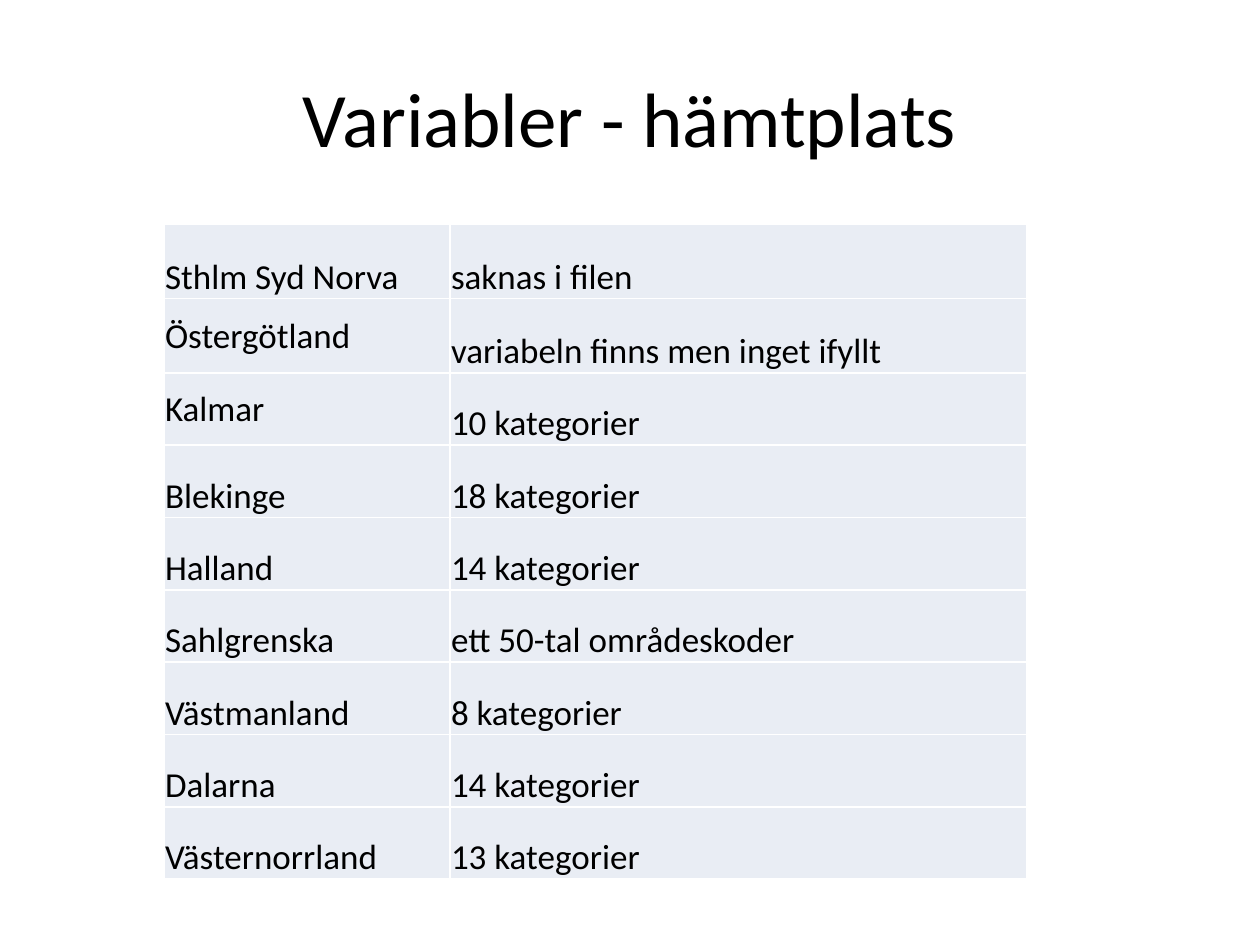
from dataclasses import dataclass

from lxml.etree import SubElement
from pptx import Presentation
from pptx.dml.color import RGBColor
from pptx.enum.text import MSO_ANCHOR, PP_ALIGN
from pptx.oxml.ns import qn
from pptx.shapes.autoshape import Shape
from pptx.slide import Slide
from pptx.table import _Cell
from pptx.text.text import _Paragraph
from pptx.util import Inches, Pt

BLACK = RGBColor(0x00, 0x00, 0x00)
WHITE = RGBColor(0xFF, 0xFF, 0xFF)
PALE_BLUE = RGBColor(0xE9, 0xED, 0xF4)
FONT = "Calibri"

TABLE_LEFT, TABLE_TOP, TABLE_HEIGHT = 1.3, 1.78, 5.2
COLUMN_WIDTHS = (2.27, 4.58)
TALL_ROWS, TALL_HEIGHT = 2, 0.59

TITLE_FORMAT = {
    "left": Inches(0.5),
    "top": Inches(0.3),
    "width": Inches(9),
    "height": Inches(1.25),
}
CELL_FORMAT = {
    "margin_left": Inches(0.01),
    "margin_right": Inches(0.01),
    "margin_top": Inches(0.01),
    "margin_bottom": 0,
}


@dataclass(frozen=True)
class Region:
    name: str
    pickup_place: str
    name_anchor: MSO_ANCHOR = MSO_ANCHOR.BOTTOM


REGIONS = (
    Region("Sthlm Syd Norva", "saknas i filen"),
    Region("Östergötland", "variabeln finns men inget ifyllt", MSO_ANCHOR.MIDDLE),
    Region("Kalmar", "10 kategorier", MSO_ANCHOR.MIDDLE),
    Region("Blekinge", "18 kategorier"),
    Region("Halland", "14 kategorier"),
    Region("Sahlgrenska", "ett 50-tal områdeskoder"),
    Region("Västmanland", "8 kategorier"),
    Region("Dalarna", "14 kategorier"),
    Region("Västernorrland", "13 kategorier"),
)


def apply_format(target: object, values: dict) -> None:
    for attribute, value in values.items():
        setattr(target, attribute, value)


def write(paragraph: _Paragraph, text: str, size: int) -> None:
    run = paragraph.add_run()
    run.text = text
    apply_format(run.font, {"name": FONT, "size": Pt(size), "bold": False})
    run.font.color.rgb = BLACK


def add_borders(cell: _Cell) -> None:
    properties = cell._tc.get_or_add_tcPr()
    for side in ("a:lnL", "a:lnR", "a:lnT", "a:lnB"):
        line = SubElement(properties, qn(side), w=str(Pt(1)))
        fill = SubElement(line, qn("a:solidFill"))
        SubElement(fill, qn("a:srgbClr"), val=str(WHITE))


def fill_cell(cell: _Cell, text: str, anchor: MSO_ANCHOR) -> None:
    apply_format(cell, {**CELL_FORMAT, "vertical_anchor": anchor})
    add_borders(cell)
    cell.fill.solid()
    cell.fill.fore_color.rgb = PALE_BLUE
    write(cell.text_frame.paragraphs[0], text, 20)


def set_title(title: Shape, text: str) -> None:
    apply_format(title, TITLE_FORMAT)
    title.text_frame.vertical_anchor = MSO_ANCHOR.MIDDLE
    heading = title.text_frame.paragraphs[0]
    heading.alignment = PP_ALIGN.CENTER
    write(heading, text, 44)


def add_region_table(slide: Slide) -> None:
    table = slide.shapes.add_table(
        len(REGIONS), len(COLUMN_WIDTHS), Inches(TABLE_LEFT), Inches(TABLE_TOP),
        Inches(sum(COLUMN_WIDTHS)), Inches(TABLE_HEIGHT),
    ).table
    apply_format(table, {"first_row": False, "horz_banding": False})
    for column, width in zip(table.columns, COLUMN_WIDTHS):
        column.width = Inches(width)

    # The first rows are taller; the others share the remaining height
    other_height = (TABLE_HEIGHT - TALL_ROWS * TALL_HEIGHT) / (len(REGIONS) - TALL_ROWS)
    for index, (row, region) in enumerate(zip(table.rows, REGIONS)):
        row.height = Inches(TALL_HEIGHT if index < TALL_ROWS else other_height)
        name_cell, pickup_cell = row.cells
        fill_cell(name_cell, region.name, region.name_anchor)
        fill_cell(pickup_cell, region.pickup_place, MSO_ANCHOR.BOTTOM)


def main() -> None:
    presentation = Presentation()
    presentation.slide_width = Inches(10)
    presentation.slide_height = Inches(7.5)

    # Title Only layout
    slide = presentation.slides.add_slide(presentation.slide_layouts[5])
    set_title(slide.shapes.title, "Variabler - hämtplats")
    add_region_table(slide)
    presentation.save("out.pptx")


if __name__ == "__main__":
    main()
